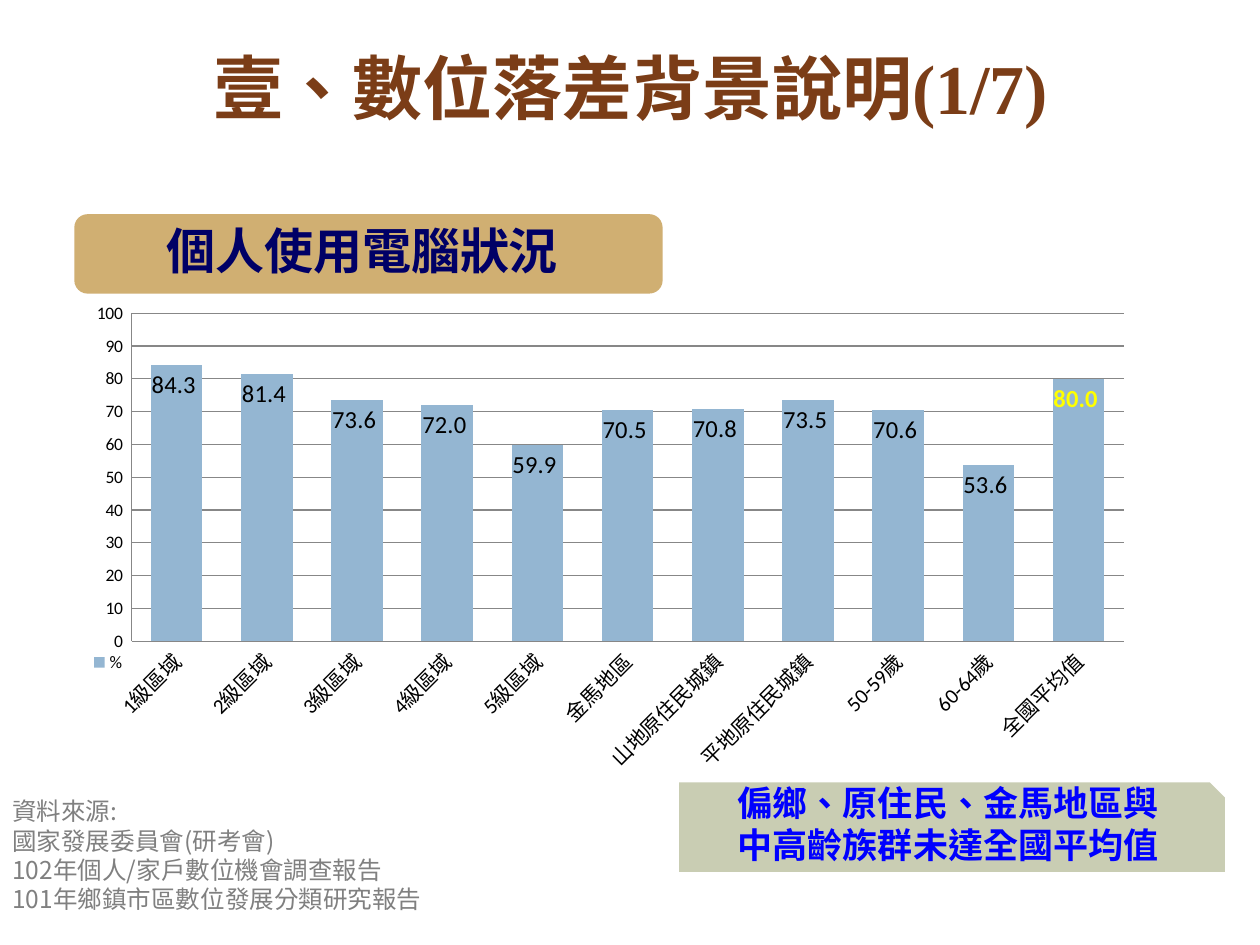
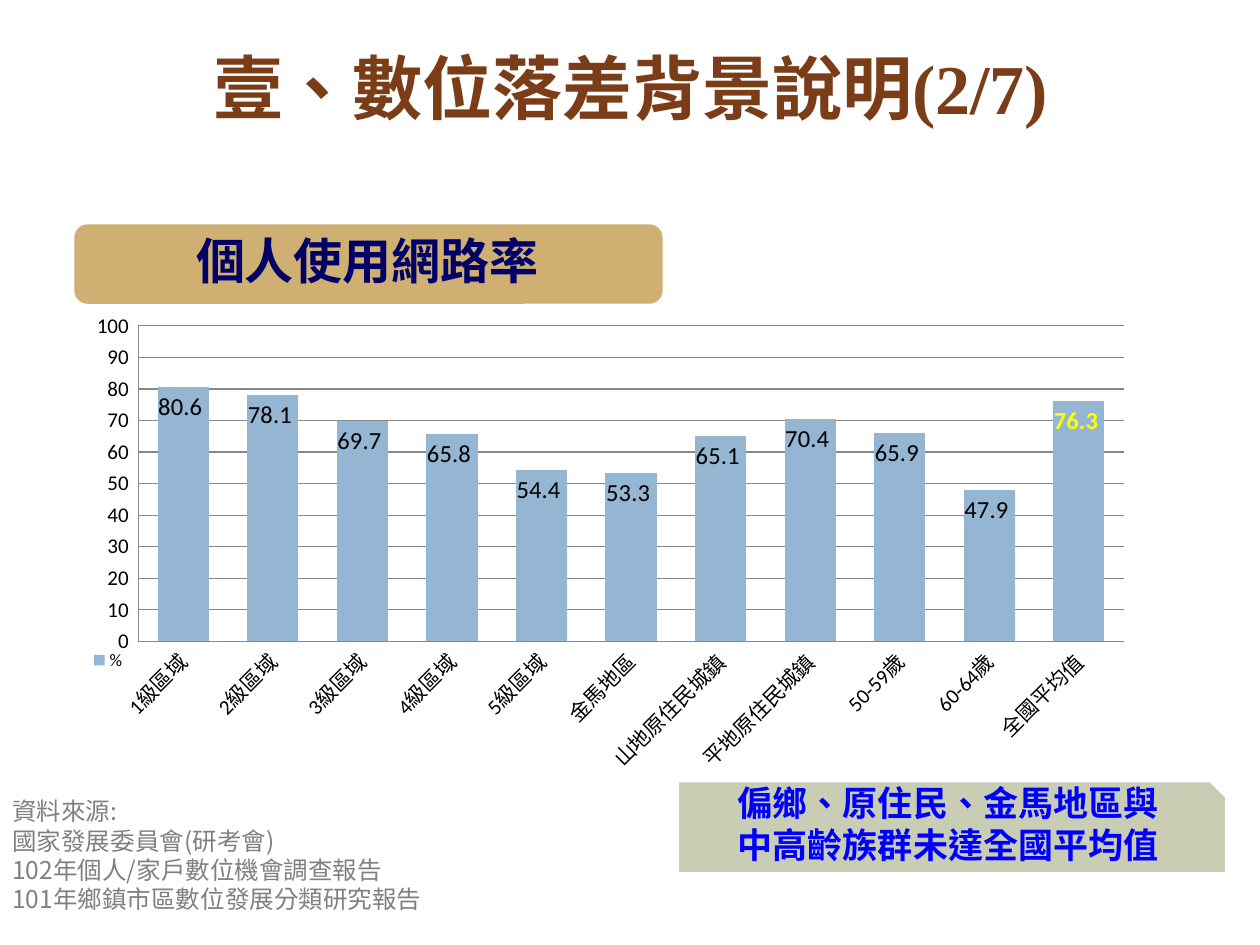
"""Build two slides on the digital divide, each a headed column chart with a finding and its sources."""
from lxml import etree
from pptx import Presentation
from pptx.chart.data import CategoryChartData
from pptx.dml.color import RGBColor
from pptx.enum import chart as charts, shapes, text
from pptx.oxml import parse_xml
from pptx.oxml.ns import nsdecls, qn
from pptx.util import Pt

TITLE = "壹、數位落差背景說明({}/7)"
GROUPS = ["1級區域", "2級區域", "3級區域", "4級區域", "5級區域", "金馬地區",
          "山地原住民城鎮", "平地原住民城鎮", "50-59歲", "60-64歲", "全國平均值"]
FINDING = "偏鄉、原住民、金馬地區與\n中高齡族群未達全國平均值"
SOURCES = "資料來源:\n國家發展委員會(研考會)\n102年個人/家戶數位機會調查報告\n101年鄉鎮市區數位發展分類研究報告"
TOPICS = [
    {"heading": "個人使用電腦狀況", "top": 122.4, "heading_x": (42.5, 329),
     "rates": [84.3, 81.4, 73.6, 72.0, 59.9, 70.5, 70.8, 73.5, 70.6, 53.6, 80.0],
     "scale_size": 10, "legend": (0.01, 0.73, 0.04, 0.05)},
    {"heading": "個人使用網路率", "top": 128.2, "heading_x": (31.7, 356.4),
     "rates": [80.6, 78.1, 69.7, 65.8, 54.4, 53.3, 65.1, 70.4, 65.9, 47.9, 76.3],
     "scale_size": 12, "legend": (0.01, 0.72, 0.04, 0.05)},
]
BROWN, NAVY, BLUE, GREY, YELLOW, BLACK = "7B3D17", "000066", "0000FF", "808080", "FFFF00", "000000"
SAND, SAGE, BAR, GRID = "D0AF72", "C9CDB3", "94B6D2", "878787"
LEFT, BAND_WIDTH, BAND_HEIGHT = 42.5, 336.2, 45.4
CHART_WIDTH, CHART_BOTTOM = 640.8, 447
RATE_FORMAT = "0.0_ "


def color(hex_code):
    return RGBColor.from_string(hex_code)


def style(font, size, hex_code, face="Calibri", bold=False):
    font.size, font.name, font.bold = Pt(size), face, bold
    font.color.rgb = color(hex_code)


def write(shape, words, size, hex_code, face, bold=True,
          align=text.PP_ALIGN.CENTER, anchor=text.MSO_ANCHOR.TOP):
    frame = shape.text_frame
    frame.text = words
    frame.word_wrap, frame.vertical_anchor = True, anchor
    for paragraph in frame.paragraphs:
        paragraph.alignment = align
        for run in paragraph.runs:
            style(run.font, size, hex_code, face, bold)
            run._r.get_or_add_rPr().set("lang", "zh-TW")


def add_panel(slide, preset, box, fill):
    panel = slide.shapes.add_shape(preset, *map(Pt, box))
    panel.shadow.inherit = False
    panel.fill.solid()
    panel.fill.fore_color.rgb = color(fill)
    panel.line.fill.background()
    return panel


def place_legend(legend, box):
    for existing in legend._element.findall(qn("c:layout")):
        legend._element.remove(existing)
    layout = parse_xml(f"<c:layout {nsdecls('c')}><c:manualLayout/></c:layout>")
    for tag, value in [("xMode", "edge"), ("yMode", "edge"), *zip("xywh", box)]:
        etree.SubElement(layout[0], qn(f"c:{tag}")).set("val", str(value))
    legend._element.find(qn("c:legendPos")).addnext(layout)


def style_axis(axis, size):
    style(axis.tick_labels.font, size, BLACK)
    axis.major_tick_mark = axis.minor_tick_mark = charts.XL_TICK_MARK.NONE
    axis.format.line.color.rgb = color(GRID)
    axis.format.line.width = Pt(0.75)


def add_rates(slide, topic):
    data = CategoryChartData(number_format=RATE_FORMAT)
    data.categories = GROUPS
    data.add_series("%", topic["rates"])
    top = topic["top"] + BAND_HEIGHT
    chart = slide.shapes.add_chart(
        charts.XL_CHART_TYPE.COLUMN_CLUSTERED, Pt(LEFT), Pt(top),
        Pt(CHART_WIDTH), Pt(CHART_BOTTOM - top), data).chart
    style(chart.font, 10, BLACK)
    chart.has_title = False
    chart.has_legend = True
    chart.legend.position = charts.XL_LEGEND_POSITION.RIGHT
    chart.legend.include_in_layout = False
    style(chart.legend.font, 10, BLACK)
    place_legend(chart.legend, topic["legend"])

    scale, groups = chart.value_axis, chart.category_axis
    style_axis(scale, topic["scale_size"])
    style_axis(groups, 12)
    scale.minimum_scale, scale.maximum_scale, scale.major_unit = 0, 100, 10
    scale.tick_labels.number_format = "0_ "
    scale.tick_labels.number_format_is_linked = False
    scale.major_gridlines.format.line.color.rgb = color(GRID)
    scale.major_gridlines.format.line.width = Pt(0.75)
    slant = groups._element.find(qn("c:txPr")).find(qn("a:bodyPr"))
    slant.set("rot", "-2700000")
    slant.set("vert", "horz")

    bars = chart.plots[0]
    bars.gap_width, bars.overlap, bars.vary_by_categories = 75, 40, False
    rates = bars.series[0]
    rates.format.fill.solid()
    rates.format.fill.fore_color.rgb = color(BAR)
    labels = rates.data_labels
    labels.show_value = True
    labels.number_format, labels.number_format_is_linked = RATE_FORMAT, False
    labels.position = charts.XL_LABEL_POSITION.INSIDE_END
    style(labels.font, 14, BLACK)
    average = rates.points[len(GROUPS) - 1].data_label
    style(average.font, 14, YELLOW, bold=True)
    average.position = charts.XL_LABEL_POSITION.INSIDE_END


def add_topic(deck, number, topic):
    slide = deck.slides.add_slide(deck.slide_layouts[5])
    title = slide.shapes.title
    title.left, title.top, title.width, title.height = map(Pt, (54.7, 4.3, 611.3, 90))
    write(title, TITLE.format(number), 40, BROWN, "Times New Roman", anchor=text.MSO_ANCHOR.MIDDLE)

    preset = shapes.MSO_SHAPE
    top = topic["top"]
    add_panel(slide, preset.ROUNDED_RECTANGLE, (LEFT, top, BAND_WIDTH, BAND_HEIGHT), SAND)
    left, width = topic["heading_x"]
    heading = slide.shapes.add_textbox(Pt(left), Pt(top), Pt(width), Pt(39.6))
    write(heading, topic["heading"], 28, NAVY, "Calibri")
    add_rates(slide, topic)

    finding = add_panel(slide, preset.SNIP_1_RECTANGLE, (388.1, 447.1, 311.8, 51.1), SAGE)
    write(finding, FINDING, 20, BLUE, "Times New Roman", anchor=text.MSO_ANCHOR.BOTTOM)
    sources = slide.shapes.add_textbox(Pt(0), Pt(451.4), Pt(290.2), Pt(74.9))
    write(sources, SOURCES, 14, GREY, "Noto Sans CJK SC", bold=False, align=text.PP_ALIGN.LEFT)


def main():
    deck = Presentation()
    deck.slide_width, deck.slide_height = Pt(720), Pt(540)
    for number, topic in enumerate(TOPICS, 1):
        add_topic(deck, number, topic)
    deck.save("out.pptx")


if __name__ == "__main__":
    main()
